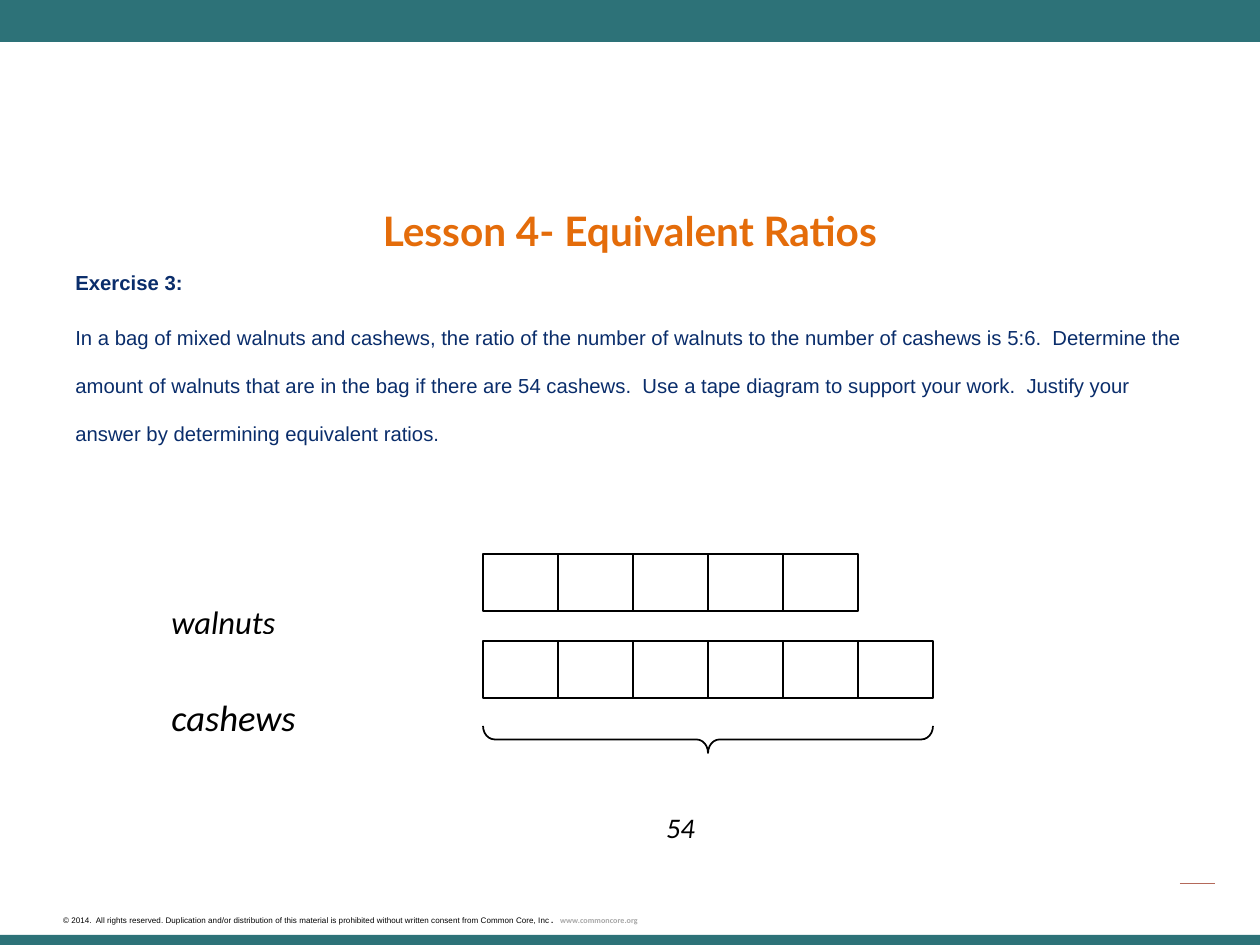
import pptx
import pptx.util
import pptx.dml.color
import pptx.enum.shapes
import pptx.enum.text
import pptx.oxml
import pptx.oxml.ns
from dataclasses import dataclass

SHAPE = pptx.enum.shapes.MSO_SHAPE
ALIGN = pptx.enum.text.PP_ALIGN
ANCHOR = pptx.enum.text.MSO_ANCHOR


@dataclass(frozen=True)
class Theme:
    teal: str = "2D7278"
    rust: str = "B4695A"
    orange: str = "E46C0A"
    navy: str = "0A2D6B"
    black: str = "000000"
    grey: str = "A6A6A6"
    white: str = "FFFFFF"
    title: int = 40
    body: int = 20
    walnuts: int = 32
    cashews: int = 36
    total: int = 28
    footer: int = 8


THEME = Theme()
WIDTH, HEIGHT = 1260, 945

TITLE = "Lesson 4- Equivalent Ratios"
EXERCISE = "Exercise 3:"
PROBLEM = (
    "In a bag of mixed walnuts and cashews, the ratio of the number of walnuts "
    "to the number of cashews is 5:6.  Determine the amount of walnuts that are "
    "in the bag if there are 54 cashews.  Use a tape diagram to support your "
    "work.  Justify your answer by determining equivalent ratios."
)
COPYRIGHT = (
    "© 2014.  All rights reserved. Duplication and/or distribution of this "
    "material is prohibited without written consent from Common Core, Inc"
)
WEBSITE = "www.commoncore.org"
# label, number of units, label size
TAPES = [("walnuts", 5, THEME.walnuts), ("cashews", 6, THEME.cashews)]
CASHEW_TOTAL = "54"

TAPE_LEFT, TAPE_TOP, TAPE_PITCH = 483, 554, 87
UNIT_WIDTH, UNIT_HEIGHT = 75, 57
LABEL_LEFT, LABEL_RISE = 159, 7
BRACE_TOP, BRACE_DEPTH = 726, 27


def px(length):
    return pptx.util.Emu(round(length * 914400 / 126))


def rgb(colour):
    return pptx.dml.color.RGBColor.from_string(colour)


def add_preset(slide, preset, box, fill=None, line=None, weight=0.75):
    shape = slide.shapes.add_shape(preset, *map(px, box))
    shape.shadow.inherit = False
    if fill:
        shape.fill.solid()
        shape.fill.fore_color.rgb = rgb(fill)
    else:
        shape.fill.background()
    if line:
        shape.line.color.rgb = rgb(line)
        shape.line.width = pptx.util.Pt(weight)
    else:
        shape.line.fill.background()
    return shape


def set_frame(shape, insets=(12.6, 6.3, 12.6, 6.3), anchor=ANCHOR.TOP):
    frame = shape.text_frame
    frame.word_wrap = True
    frame.vertical_anchor = anchor
    (frame.margin_left, frame.margin_top,
     frame.margin_right, frame.margin_bottom) = map(px, insets)
    return frame


def add_text(slide, box, **layout):
    return set_frame(slide.shapes.add_textbox(*map(px, box)), **layout)


def add_run(paragraph, text, size, colour, font="Arial", bold=False,
            italic=False, lowered=True):
    """Add one run; lowered text sits a quarter below the baseline."""
    run = paragraph.add_run()
    run.text = text
    run.font.size = pptx.util.Pt(size)
    run.font.name = font
    run.font.bold = bold
    run.font.italic = italic
    run.font.color.rgb = rgb(colour)
    if lowered:
        run.font._element.set("baseline", "-25000")


def add_diagram_text(frame, text, size):
    paragraph = frame.paragraphs[0]
    paragraph.alignment = ALIGN.LEFT
    paragraph.line_spacing = 1.15
    paragraph.space_after = pptx.util.Pt(10)
    add_run(paragraph, text, size, THEME.black, "Calibri", italic=True)


def add_page_frame(slide):
    add_preset(slide, SHAPE.RECTANGLE, (0, 0, WIDTH, 42), THEME.teal)
    add_preset(slide, SHAPE.RECTANGLE, (0, 935, WIDTH, 10), THEME.teal)
    rule = slide.shapes.add_connector(
        pptx.enum.shapes.MSO_CONNECTOR.STRAIGHT,
        *map(px, (1180, 883, 1215, 883)))
    rule.line.color.rgb = rgb(THEME.rust)
    rule.line.width = pptx.util.Pt(0.5)
    pptx.oxml.ns.qn("a:effectLst")
    rule._element.spPr.append(pptx.oxml.parse_xml(
        f'<a:effectLst {pptx.oxml.ns.nsdecls("a")}/>'))

    footer = add_text(slide, (63, 906, 761, 16), insets=(0, 0, 0, 0)).paragraphs[0]
    footer._p.get_or_add_pPr().append(pptx.oxml.parse_xml(
        f'<a:tabLst {pptx.oxml.ns.nsdecls("a")}>'
        f'<a:tab pos="{px(497)}" algn="l"/></a:tabLst>'))
    add_run(footer, COPYRIGHT, THEME.footer, THEME.black)
    add_run(footer, ".\t", THEME.footer, THEME.black, bold=True)
    add_run(footer, WEBSITE, THEME.footer, THEME.grey, "Calibri", bold=True)


def add_exercise(slide):
    title = add_text(slide, (63, 150, 1134, 113), anchor=ANCHOR.MIDDLE).paragraphs[0]
    title.alignment = ALIGN.CENTER
    add_run(title, TITLE, THEME.title, THEME.orange, "Lato", bold=True)

    body = add_text(slide, (63, 241, 1134, 236))
    add_run(body.paragraphs[0], EXERCISE, THEME.body, THEME.navy, bold=True)
    problem = body.add_paragraph()
    problem.space_before = pptx.util.Pt(4)
    add_run(problem, PROBLEM, THEME.body, THEME.navy)


def add_tape_diagram(slide):
    for row, (label, units, size) in enumerate(TAPES):
        top = TAPE_TOP + row * TAPE_PITCH
        for unit in range(units):
            add_preset(slide, SHAPE.RECTANGLE,
                       (TAPE_LEFT + unit * UNIT_WIDTH, top, UNIT_WIDTH, UNIT_HEIGHT),
                       line=THEME.black)
        name = add_preset(slide, SHAPE.RECTANGLE,
                          (LABEL_LEFT, top - LABEL_RISE, 255, 72), THEME.white)
        add_diagram_text(set_frame(name), label, size)

    # The brace is drawn upright and turned, so its frame shares the turned centre.
    span = TAPES[-1][1] * UNIT_WIDTH
    brace = add_preset(slide, SHAPE.RIGHT_BRACE,
                       (TAPE_LEFT + (span - BRACE_DEPTH) / 2,
                        BRACE_TOP + (BRACE_DEPTH - span) / 2, BRACE_DEPTH, span),
                       line=THEME.black, weight=1)
    brace.rotation = 90
    brace.adjustments[0] = 0.43
    total = add_text(slide, (648, 755, 122, 84), insets=(18, 12.6, 12.6, 12.6))
    add_diagram_text(total, CASHEW_TOTAL, THEME.total)


def main():
    deck = pptx.Presentation()
    deck.slide_width, deck.slide_height = px(WIDTH), px(HEIGHT)
    slide = deck.slides.add_slide(deck.slide_layouts[6])
    add_page_frame(slide)
    add_exercise(slide)
    add_tape_diagram(slide)
    deck.save("out.pptx")


if __name__ == "__main__":
    main()
